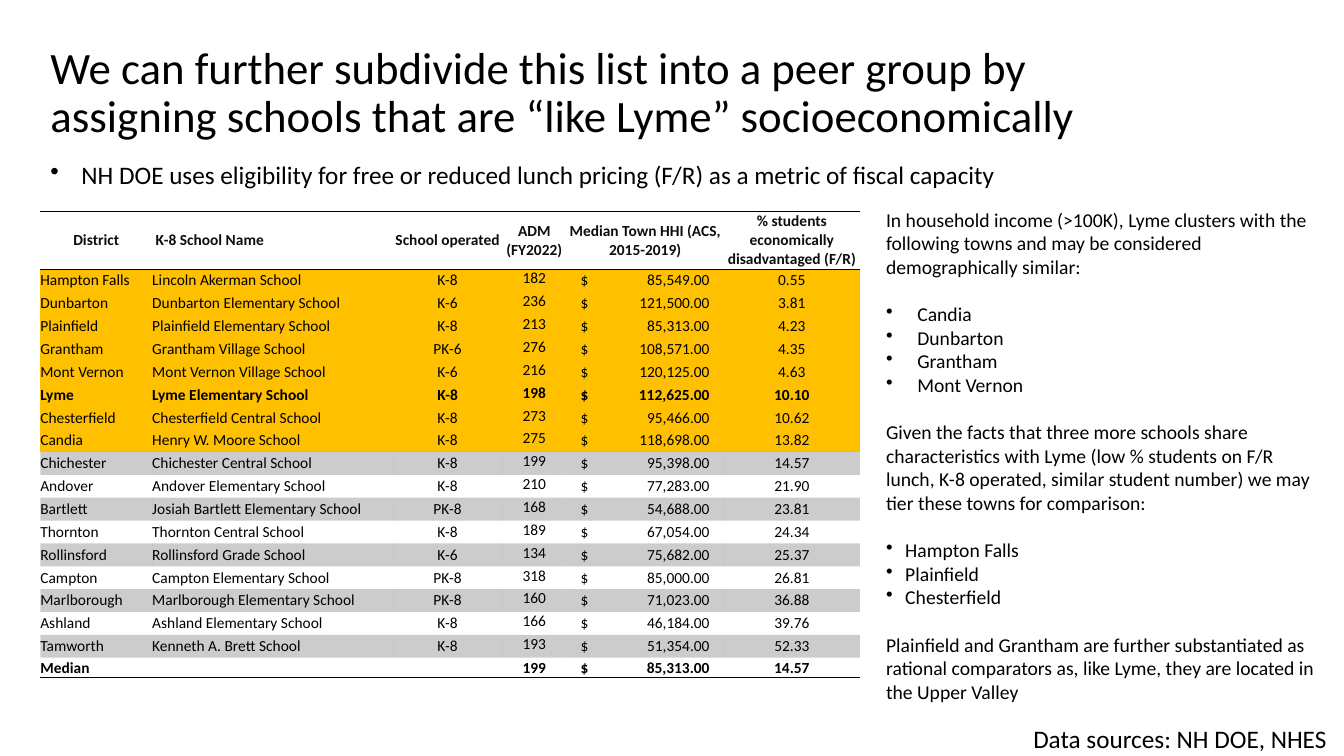
from lxml import etree
from pptx import Presentation, util as u
from pptx.dml.color import RGBColor
from pptx.enum import text
from pptx.oxml.ns import qn

TITLE = ("We can further subdivide this list into a peer group by assigning "
         "schools that are “like Lyme” socioeconomically")
METRIC = ("NH DOE uses eligibility for free or reduced lunch pricing (F/R) "
          "as a metric of fiscal capacity")
SOURCES = "Data sources: NH DOE, NHES"
HEADER = ("District", " K-8 School Name", "School operated", "ADM (FY2022)",
          "Median Town HHI (ACS, 2015-2019)",
          "% students economically disadvantaged (F/R)")
PEERS = [
    ("Hampton Falls", "Lincoln Akerman School", "K-8", 182, 85549, 0.55),
    ("Dunbarton", "Dunbarton Elementary School", "K-6", 236, 121500, 3.81),
    ("Plainfield", "Plainfield Elementary School", "K-8", 213, 85313, 4.23),
    ("Grantham", "Grantham Village School", "PK-6", 276, 108571, 4.35),
    ("Mont Vernon", "Mont Vernon Village School", "K-6", 216, 120125, 4.63),
    ("Lyme", "Lyme Elementary School", "K-8", 198, 112625, 10.10),
    ("Chesterfield", "Chesterfield Central School", "K-8", 273, 95466, 10.62),
    ("Candia", "Henry W. Moore School", "K-8", 275, 118698, 13.82),
]
OTHERS = [
    ("Chichester", "Chichester Central School", "K-8", 199, 95398, 14.57),
    ("Andover", "Andover Elementary School", "K-8", 210, 77283, 21.90),
    ("Bartlett", "Josiah Bartlett Elementary School", "PK-8", 168, 54688, 23.81),
    ("Thornton", "Thornton Central School", "K-8", 189, 67054, 24.34),
    ("Rollinsford", "Rollinsford Grade School", "K-6", 134, 75682, 25.37),
    ("Campton", "Campton Elementary School", "PK-8", 318, 85000, 26.81),
    ("Marlborough", "Marlborough Elementary School", "PK-8", 160, 71023, 36.88),
    ("Ashland", "Ashland Elementary School", "K-8", 166, 46184, 39.76),
    ("Tamworth", "Kenneth A. Brett School", "K-8", 193, 51354, 52.33),
]
MEDIAN = ("Median", "", "", 199, 85313, 14.57)
COMMENTARY = [
    ("In household income (>100K), Lyme clusters with the following towns and "
     "may be considered demographically similar:", 0,
     ("Candia", "Dunbarton", "Grantham", "Mont Vernon")),
    ("Given the facts that three more schools share characteristics with Lyme "
     "(low % students on F/R lunch, K-8 operated, similar student number) we "
     "may tier these towns for comparison:", 0.31,
     ("Hampton Falls", "Plainfield", "Chesterfield")),
    ("Plainfield and Grantham are further substantiated as rational comparators "
     "as, like Lyme, they are located in the Upper Valley", 0.19, ()),
]
TOWN_INDENTS = (0.31, 0.19, 0)

BLACK = RGBColor(0, 0, 0)
HEADING = RGBColor(0x0D, 0x0D, 0x0D)
GOLD = RGBColor(0xFF, 0xC0, 0x00)
FONT = "Calibri"
COLUMNS = (1.11, 2.39, 1.08, 0.64, 1.56, 1.35)
HEADER_ROW, SCHOOL_ROW, MEDIAN_ROW = 0.57, 0.227, 0.2
LEFT, TABLE_TOP = 0.4, 2.1
DOLLAR_INSET, AMOUNT_STOP = 0.14, 1.28
BLANK_LINE = 17.1
NO_STYLE = "{2D5ABB26-0587-4C30-8999-92F81FD0307C}"


def style(paragraph, size, color=BLACK, bold=False):
    font = paragraph.font
    font.name, font.size, font.bold = FONT, u.Pt(size), bold
    font.color.rgb = color


def add_bullet(paragraph, indent):
    props = paragraph._p.get_or_add_pPr()
    props.set("marL", str(u.Inches(indent)))
    props.set("indent", str(-u.Inches(indent)))
    mark = etree.Element(qn("a:buChar"), char="•")
    props.insert_element_before(mark, "a:tabLst", "a:defRPr")


def add_amount_stop(paragraph):
    stops = etree.Element(qn("a:tabLst"))
    etree.SubElement(stops, qn("a:tab"), pos=str(u.Inches(AMOUNT_STOP)), algn="r")
    paragraph._p.get_or_add_pPr().insert_element_before(stops, "a:defRPr")


def add_rule(cell, side):
    rule = etree.Element(qn("a:" + side), w=str(u.Pt(1)))
    ink = etree.SubElement(rule, qn("a:solidFill"))
    etree.SubElement(ink, qn("a:srgbClr"), val=str(BLACK))
    props = cell._tc.get_or_add_tcPr()
    props.insert(len(props.findall(qn("a:lnT"))), rule)


def add_box(slide, left, top, width, height, wrap):
    box = slide.shapes.add_textbox(*map(u.Inches, (left, top, width, height)))
    box.text_frame.word_wrap = wrap
    box.text_frame.auto_size = text.MSO_AUTO_SIZE.SHAPE_TO_FIT_TEXT
    return box.text_frame


def add_schools(slide):
    rows = [HEADER] + [
        (*names, str(adm), f"$\t{income:,}.00", f"{share:.2f}")
        for *names, adm, income, share in PEERS + OTHERS + [MEDIAN]]
    last = len(rows) - 1
    heights = [HEADER_ROW] + [SCHOOL_ROW] * (last - 1) + [MEDIAN_ROW]
    schools = slide.shapes.add_table(
        len(rows), len(COLUMNS), u.Inches(LEFT), u.Inches(TABLE_TOP),
        u.Inches(sum(COLUMNS)), u.Inches(sum(heights))).table
    schools.first_row = schools.horz_banding = False
    schools._tbl.tblPr.find(qn("a:tableStyleId")).text = NO_STYLE
    for column, width in zip(schools.columns, COLUMNS):
        column.width = u.Inches(width)
    for r, row in enumerate(rows):
        schools.rows[r].height = u.Inches(heights[r])
        for c, value in enumerate(row):
            cell = schools.cell(r, c)
            income = c == 4 and r > 0
            cell.margin_left = u.Inches(DOLLAR_INSET if income else 0)
            cell.margin_right = cell.margin_top = cell.margin_bottom = 0
            top_set = c == 3 and 0 < r < last
            cell.vertical_anchor = (text.MSO_ANCHOR.TOP if top_set
                                    else text.MSO_ANCHOR.MIDDLE)
            cell.text = value
            paragraph = cell.text_frame.paragraphs[0]
            flush = income or c == 1 or (c == 0 and r > 0)
            paragraph.alignment = text.PP_ALIGN.LEFT if flush else text.PP_ALIGN.CENTER
            style(paragraph, 11, BLACK if r else HEADING,
                  r in (0, last) or row[0] == "Lyme")
            if income:
                add_amount_stop(paragraph)
            if not value:
                paragraph._p.get_or_add_endParaRPr().set("sz", "1100")
            if 1 <= r <= len(PEERS):
                cell.fill.solid()
                cell.fill.fore_color.rgb = GOLD
            elif len(PEERS) < r < last and (r - len(PEERS)) % 2:
                cell.fill.solid()
                cell.fill.fore_color.rgb = BLACK
                shade = cell._tc.tcPr.find(".//" + qn("a:srgbClr"))
                etree.SubElement(shade, qn("a:alpha"), val="20000")
            else:
                cell.fill.background()
            if r == 0:
                add_rule(cell, "lnT")
            if r in (0, last):
                add_rule(cell, "lnB")


def add_commentary(slide):
    frame = add_box(slide, 8.69, 2.01, 4.56, 5.28, True)
    paragraph = frame.paragraphs[0]
    for n, (statement, _, towns) in enumerate(COMMENTARY):
        if n:
            paragraph = frame.add_paragraph()
            paragraph.space_before = u.Pt(BLANK_LINE)
        paragraph.text = statement
        style(paragraph, 14)
        for t, town in enumerate(towns):
            paragraph = frame.add_paragraph()
            paragraph.text = town
            paragraph.space_before = u.Pt(0 if t else BLANK_LINE)
            style(paragraph, 14)
            add_bullet(paragraph, TOWN_INDENTS[n])


def main():
    deck = Presentation()
    deck.slide_width, deck.slide_height = u.Inches(13.33), u.Inches(7.5)
    slide = deck.slides.add_slide(deck.slide_layouts[5])
    title = slide.shapes.title
    title.left, title.top, title.width, title.height = map(
        u.Inches, (LEFT, 0.21, 11.5, 1.45))
    title.text = TITLE
    title.text_frame.vertical_anchor = text.MSO_ANCHOR.MIDDLE
    heading = title.text_frame.paragraphs[0]
    heading.alignment, heading.line_spacing = text.PP_ALIGN.LEFT, 0.9
    style(heading, 32)
    add_schools(slide)
    add_commentary(slide)
    for line, left, top, width in ((METRIC, LEFT, 1.53, 9.75),
                                   (SOURCES, 10.15, 7.13, 3.14)):
        paragraph = add_box(slide, left, top, width, 0.4, False).paragraphs[0]
        paragraph.text = line
        style(paragraph, 18)
        if line == METRIC:
            add_bullet(paragraph, 0.31)
    deck.save("out.pptx")


if __name__ == "__main__":
    main()
